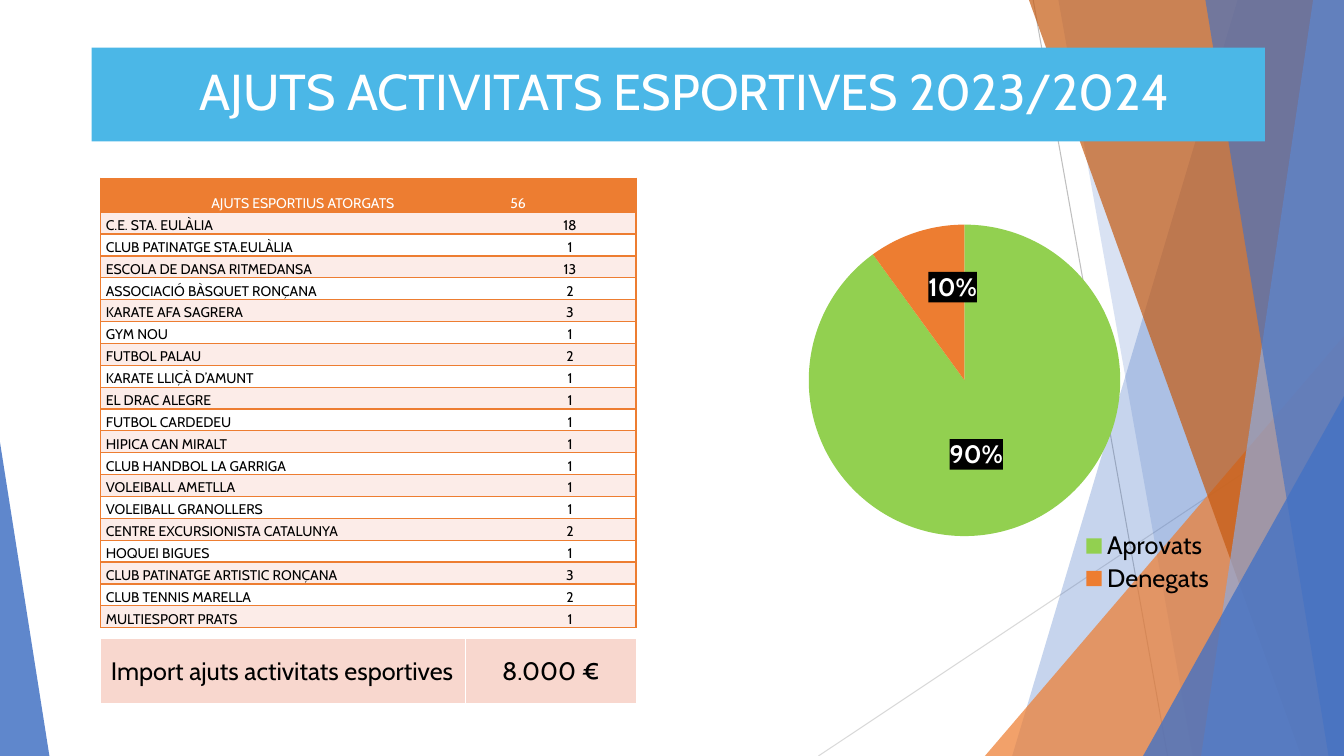
from dataclasses import dataclass

from lxml import etree
from pptx import Presentation
from pptx import oxml
from pptx import util as u
from pptx.chart import data as chart_data
from pptx.dml.color import RGBColor
from pptx.enum import chart as charts
from pptx.enum import shapes, text
from pptx.oxml import ns


@dataclass(frozen=True)
class Theme:
    font: str = "Cabin"
    white: str = "FFFFFF"
    black: str = "000000"
    blue: str = "4472C4"
    light_blue: str = "8FAADC"
    orange: str = "ED7D31"
    dark_orange: str = "C55A11"
    green: str = "92D050"
    banner: str = "4BB7E7"
    total: str = "F8D7CE"
    band: str = "FCECE8"
    title_size: float = 36
    body_size: float = 18
    table_size: float = 10


THEME = Theme()
PAGE_WIDTH, PAGE_HEIGHT = 960, 540
PLAIN_TABLE = "{2D5ABB26-0587-4C30-8999-92F81FD0307C}"
CENTER, JUSTIFY, LEFT = text.PP_ALIGN.CENTER, text.PP_ALIGN.JUSTIFY, text.PP_ALIGN.LEFT

GRANTS = [
    ("C.E. STA. EULÀLIA", 18), ("CLUB PATINATGE STA.EULÀLIA", 1),
    ("ESCOLA DE DANSA RITMEDANSA", 13), ("ASSOCIACIÓ BÀSQUET RONÇANA", 2),
    ("KARATE AFA SAGRERA", 3), ("GYM NOU", 1), ("FUTBOL PALAU", 2),
    ("KARATE LLIÇÀ D’AMUNT", 1), ("EL DRAC ALEGRE", 1), ("FUTBOL CARDEDEU", 1),
    ("HIPICA CAN MIRALT", 1), ("CLUB HANDBOL LA GARRIGA", 1),
    ("VOLEIBALL AMETLLA", 1), ("VOLEIBALL GRANOLLERS", 1),
    ("CENTRE EXCURSIONISTA CATALUNYA", 2), ("HOQUEI BIGUES", 1),
    ("CLUB PATINATGE ARTISTIC RONÇANA", 3), ("CLUB TENNIS MARELLA", 2),
    ("MULTIESPORT PRATS", 1),
]


def apply(target, **values):
    for name, value in values.items():
        setattr(target, name, value)


def xml(markup):
    """Build an element from markup whose root tag lacks namespace declarations."""
    end = min(i for i in (markup.find(c) for c in " />") if i > 0)
    return oxml.parse_xml(markup[:end] + " " + ns.nsdecls("a", "c") + markup[end:])


def manual_layout(x, y, width=None, height=None, inner=False):
    modes = '<c:xMode val="edge"/><c:yMode val="edge"/>' if width else ""
    target = '<c:layoutTarget val="inner"/>' if inner else ""
    size = f'<c:w val="{width}"/><c:h val="{height}"/>' if width else ""
    return (f'<c:layout><c:manualLayout>{target}{modes}<c:x val="{x}"/><c:y val="{y}"/>'
            f"{size}</c:manualLayout></c:layout>")


class SlideBuilder:
    def __init__(self, slide, theme):
        self.slide, self.theme = slide, theme

    def paint(self, shape, color, opacity=100):
        shape.shadow.inherit = False
        shape.fill.solid()
        shape.fill.fore_color.rgb = RGBColor.from_string(color)
        shape.line.fill.background()
        if opacity < 100:
            color_node = shape.element.xpath("./p:spPr/a:solidFill/a:srgbClr")[0]
            etree.SubElement(color_node, ns.qn("a:alpha"), val=str(opacity * 1000))

    def line(self, start, end, color):
        line = self.slide.shapes.add_connector(
            shapes.MSO_CONNECTOR.STRAIGHT, *map(u.Pt, start + end))
        apply(line.line, width=u.Pt(0.75))
        line.line.color.rgb = RGBColor.from_string(color)
        line.element.spPr.append(xml("<a:effectLst/>"))

    def ribbon(self, top_x, bottom_x, color, opacity):
        """A slanted band running from its left edge to the page's right edge."""
        corners = [(top_x, 0), (PAGE_WIDTH, 0), (PAGE_WIDTH, PAGE_HEIGHT), (bottom_x, PAGE_HEIGHT)]
        points = [(u.Pt(x), u.Pt(y)) for x, y in corners]
        builder = self.slide.shapes.build_freeform(*points[0])
        builder.add_line_segments(points[1:], close=True)
        self.paint(builder.convert_to_shape(), color, opacity)

    def corner(self, left, top, width, apex, color, opacity):
        shape = self.slide.shapes.add_shape(
            shapes.MSO_SHAPE.ISOSCELES_TRIANGLE,
            *map(u.Pt, (left, top, width, PAGE_HEIGHT - top)))
        shape.adjustments[0] = apex
        self.paint(shape, color, opacity)

    def words(self, frame, content, size, color, **paragraph_format):
        paragraph = frame.paragraphs[0]
        apply(paragraph, **paragraph_format)
        run = paragraph.add_run()
        run.text = content
        apply(run.font, name=self.theme.font, size=u.Pt(size), bold=False)
        run.font.color.rgb = RGBColor.from_string(color)
        return paragraph

    def title(self, content, box):
        shape = self.slide.shapes.title
        self.slide.shapes.element.append(shape.element)  # bring in front of the ribbons
        apply(shape, **dict(zip(("left", "top", "width", "height"), map(u.Pt, box))))
        self.paint(shape, self.theme.banner)
        apply(shape.text_frame, word_wrap=True, auto_size=text.MSO_AUTO_SIZE.NONE,
              vertical_anchor=text.MSO_ANCHOR.MIDDLE, margin_left=u.Pt(16))
        self.words(shape.text_frame, content, self.theme.title_size, self.theme.white,
                   alignment=CENTER, line_spacing=0.9)

    def table(self, left, top, widths, heights):
        frame = self.slide.shapes.add_table(
            len(heights), len(widths), *map(u.Pt, (left, top, sum(widths), sum(heights))))
        table = frame.table
        apply(table, first_row=False, horz_banding=False)
        frame.element.xpath(".//a:tableStyleId")[0].text = PLAIN_TABLE
        for column, width in zip(table.columns, widths):
            column.width = u.Pt(width)
        for row, height in zip(table.rows, heights):
            row.height = u.Pt(height)
        return table

    def cell(self, cell, fill, border, sides, **cell_format):
        properties = cell._tc.get_or_add_tcPr()
        for side in sides:
            properties.append(xml(
                f'<a:ln{side} w="12700"><a:solidFill><a:srgbClr val="{border}"/>'
                f"</a:solidFill></a:ln{side}>"))
        cell.fill.solid()
        cell.fill.fore_color.rgb = RGBColor.from_string(fill)
        apply(cell, **cell_format)

    def pie(self, box, values, colors, label_shifts):
        data = chart_data.CategoryChartData()
        data.categories = list(values)
        data.add_series("Series 1", list(values.values()))
        chart = self.slide.shapes.add_chart(
            charts.XL_CHART_TYPE.PIE, *map(u.Pt, box), data).chart
        apply(chart, has_title=False, has_legend=True)
        apply(chart.font, name=self.theme.font, size=u.Pt(self.theme.body_size))
        chart.font.color.rgb = RGBColor.from_string(self.theme.black)
        apply(chart.legend, position=charts.XL_LEGEND_POSITION.RIGHT, include_in_layout=False)
        chart.plots[0].vary_by_categories = True
        series = chart.plots[0].series[0]
        for index, color in enumerate(colors):
            point = series.points[index].format
            point.fill.solid()
            point.fill.fore_color.rgb = RGBColor.from_string(color)
            point.line.fill.background()

        # Percent labels, white on black
        flags = "".join(f'<c:show{name} val="{int(name == "Percent")}"/>' for name in (
            "LegendKey", "Val", "CatName", "SerName", "Percent", "BubbleSize"))
        style = (
            '<c:numFmt formatCode="0%" sourceLinked="0"/><c:spPr><a:solidFill>'
            f'<a:srgbClr val="{self.theme.black}"/></a:solidFill></c:spPr>'
            f'<c:txPr><a:bodyPr/><a:p><a:pPr><a:defRPr sz="{self.theme.body_size * 100}" b="1">'
            f'<a:solidFill><a:srgbClr val="{self.theme.white}"/></a:solidFill>'
            f'<a:latin typeface="{self.theme.font}"/></a:defRPr></a:pPr>'
            f'<a:endParaRPr lang="ca"/></a:p></c:txPr><c:dLblPos val="ctr"/>{flags}')
        points = "".join(f'<c:dLbl><c:idx val="{index}"/>{manual_layout(*shift)}{style}</c:dLbl>'
                         for index, shift in enumerate(label_shifts))
        labels = xml(f'<c:dLbls>{points}{style}<c:showLeaderLines val="0"/></c:dLbls>')
        chart.element.xpath(".//c:ser/c:cat")[0].addprevious(labels)

        # Places of the pie and its legend
        plot_area = chart.element.xpath(".//c:plotArea")[0]
        for old in chart.element.xpath(".//c:plotArea/c:layout | .//c:legend/c:layout"):
            old.getparent().remove(old)
        plot_area.insert(0, xml(manual_layout(0.24, 0.14, 0.51, 0.66, inner=True)))
        chart.element.xpath(".//c:legendPos")[0].addnext(
            xml(manual_layout(0.68, 0.78, 0.23, 0.14)))


def main():
    presentation = Presentation()
    apply(presentation, slide_width=u.Pt(PAGE_WIDTH), slide_height=u.Pt(PAGE_HEIGHT))
    slide = presentation.slides.add_slide(presentation.slide_layouts[5])
    builder, theme = SlideBuilder(slide, THEME), THEME

    # Background ribbons
    builder.line((738, 0), (834, 540), "BFBFBF")
    builder.line((960, 290), (584.6, 540), "D9D9D9")
    builder.ribbon(884, 723, theme.blue, 30)
    builder.ribbon(756, 852, theme.blue, 20)
    builder.corner(703.5, 240, 256.5, 1, theme.orange, 72)
    builder.ribbon(735, 929.5, theme.dark_orange, 70)
    builder.ribbon(938, 858, theme.light_blue, 70)
    builder.ribbon(861, 949, theme.blue, 65)
    builder.corner(816.5, 283, 143.5, 1, theme.blue, 80)
    builder.corner(0, 316, 35.3, 0, theme.blue, 85)

    builder.title("AJUTS ACTIVITATS ESPORTIVES 2023/2024", (65.5, 34, 838, 67))

    # Total amount
    total = builder.table(72, 456, (260.5, 122), (46.8,))
    for column, (content, align) in enumerate(
            [("Import ajuts activitats esportives", LEFT), ("8.000 €", CENTER)]):
        cell = total.cell(0, column)
        builder.cell(cell, theme.total, theme.white, "LRTB", vertical_anchor=text.MSO_ANCHOR.MIDDLE)
        builder.words(cell.text_frame, content, theme.body_size, theme.black, alignment=align)

    # Grants by club
    grants = builder.table(72, 127.4, (288, 94.3), [24.2] + [15.62] * len(GRANTS))
    tight = dict(vertical_anchor=text.MSO_ANCHOR.BOTTOM, margin_left=u.Pt(3.6),
                 margin_right=u.Pt(3.6), margin_top=0, margin_bottom=0)
    spacing = dict(line_spacing=1.07, space_after=u.Pt(8))
    header = grants.cell(0, 0)
    header.merge(grants.cell(0, 1))
    builder.cell(header, theme.orange, theme.orange, "LRTB", **{**tight, "margin_left": u.Pt(79)})
    heading = builder.words(header.text_frame, "AJUTS ESPORTIUS ATORGATS\t56",
                            theme.table_size, theme.white, alignment=LEFT, **spacing)
    heading._p.get_or_add_pPr().append(
        xml(f'<a:tabLst><a:tab pos="{u.Pt(213.5)}" algn="l"/></a:tabLst>'))
    for row, (club, count) in enumerate(GRANTS, 1):
        fill = theme.band if row % 2 else theme.white
        for column, (content, align, sides) in enumerate(
                [(club, JUSTIFY, "LTB"), (str(count), CENTER, "RTB")]):
            cell = grants.cell(row, column)
            builder.cell(cell, fill, theme.orange, sides, **tight)
            builder.words(cell.text_frame, content, theme.table_size, theme.black,
                          alignment=align, **spacing)

    # Approved and refused shares
    builder.pie((473, 111, 436.3, 342), {"Aprovats": 90, "Denegats": 10},
                (theme.green, theme.orange), [(-0.02, 0), (0.02, -0.04)])

    presentation.save("out.pptx")


if __name__ == "__main__":
    main()
